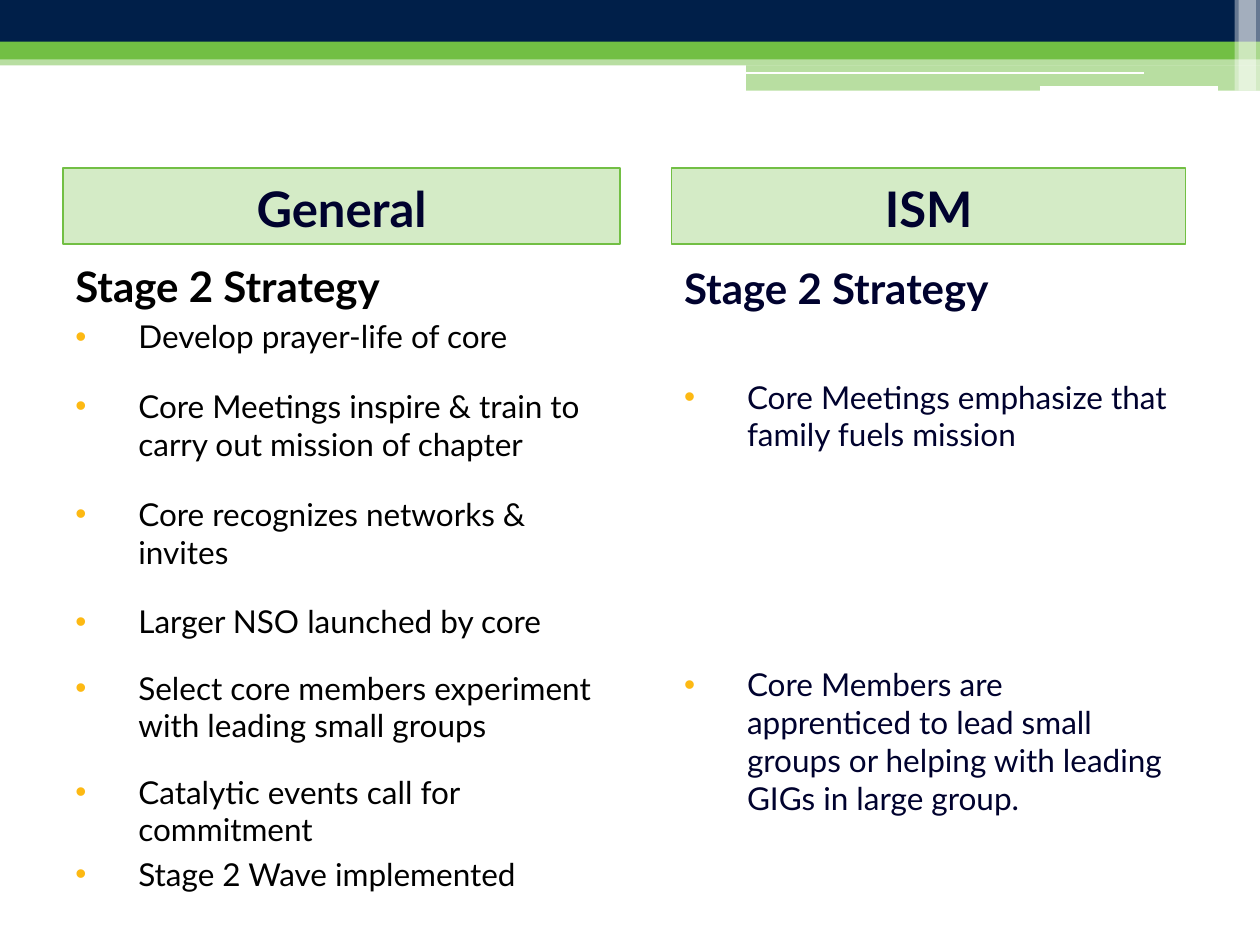
from dataclasses import dataclass

from lxml import etree
from pptx import Presentation
from pptx import util as u
from pptx.dml.color import RGBColor
from pptx.enum import shapes, text
from pptx.oxml import ns


@dataclass(frozen=True)
class Theme:
    font: str = "Lato"
    navy: str = "001F49"
    green: str = "72BF44"
    gold: str = "FDB913"
    white: str = "FFFFFF"
    ink: str = "00022E"
    black: str = "000000"
    banner_size: int = 28
    heading_size: int = 24
    body_size: int = 18


def apply(target, values):
    for name, value in values.items():
        setattr(target, name, value)


def add_element(parent, tag, **attributes):
    return etree.SubElement(parent, ns.qn(tag), attributes)


class SlideBuilder:
    def __init__(self, page, theme):
        self.page = page
        self.theme = theme

    def block(self, left, top, width, height, color, opacity=100, border=None):
        """Filled rectangle, optionally see-through or outlined."""
        box = self.page.shapes.add_shape(
            shapes.MSO_SHAPE.RECTANGLE, *map(u.Cm, (left, top, width, height)))
        box.shadow.inherit = False
        box.fill.solid()
        box.fill.fore_color.rgb = RGBColor.from_string(color)
        if opacity < 100:
            fill = box._element.spPr.find(ns.qn("a:solidFill"))
            add_element(fill[0], "a:alpha", val=str(opacity * 1000))
        if border:
            box.line.color.rgb = RGBColor.from_string(border)
            box.line.width = u.Pt(0.75)
        else:
            box.line.fill.background()
        return box

    def rule(self, left, right, top, weight):
        """White horizontal line."""
        line = self.page.shapes.add_connector(
            shapes.MSO_CONNECTOR.STRAIGHT,
            u.Cm(left), u.Cm(top), u.Cm(right), u.Cm(top))
        line.line.color.rgb = RGBColor.from_string(self.theme.white)
        line.line.width = u.Pt(weight)
        add_element(line._element.spPr, "a:effectLst")

    def add_span(self, para, wording, size, color, bold=False):
        span = para.add_run()
        span.text = wording
        apply(span.font, {"name": self.theme.font, "size": u.Pt(size), "bold": bold})
        span.font.color.rgb = RGBColor.from_string(color)

    def banner(self, left, top, width, height, wording):
        """Pale green column header."""
        green = self.theme.green
        box = self.block(left, top, width, height, green, 30, border=green)
        apply(box.text_frame, {"word_wrap": True,
                               "vertical_anchor": text.MSO_ANCHOR.BOTTOM})
        para = box.text_frame.paragraphs[0]
        para.alignment = text.PP_ALIGN.CENTER
        self.add_span(para, wording, self.theme.banner_size, self.theme.ink, True)

    def bullet(self, para):
        properties = para._p.get_or_add_pPr()
        indent = u.Cm(1.27)
        properties.set("marL", str(indent))
        properties.set("indent", str(-indent))
        color = add_element(properties, "a:buClr")
        add_element(color, "a:srgbClr", val=self.theme.gold)
        add_element(properties, "a:buFont", typeface="Arial")
        add_element(properties, "a:buChar", char="•")

    def strategy(self, left, top, width, height, heading, items, color):
        """Bold heading above bullets given as (space before, wording)."""
        box = self.page.shapes.add_textbox(*map(u.Cm, (left, top, width, height)))
        frame = box.text_frame
        frame.word_wrap = True
        self.add_span(frame.paragraphs[0], heading, self.theme.heading_size, color, True)
        for gap, wording in items:
            para = frame.add_paragraph()
            self.bullet(para)
            para.space_before = u.Pt(gap)
            self.add_span(para, wording, self.theme.body_size, color)


def main():
    theme = Theme()
    deck = Presentation()
    apply(deck, {"slide_width": u.Cm(25.4), "slide_height": u.Cm(19.05)})
    page = deck.slides.add_slide(deck.slide_layouts[6])
    builder = SlideBuilder(page, theme)

    # Top bands
    for band in ((0, 0.74, 25.4, 0.46, theme.green),
                 (0, 1.07, 25.4, 0.25, theme.green, 50),
                 (15.04, 1.32, 10.36, 0.51, theme.green, 50),
                 (0, 0, 25.4, 0.84, theme.navy)):
        builder.block(*band)
    builder.rule(15.04, 23.06, 1.47, 1.5)
    builder.rule(20.96, 24.56, 1.78, 3)
    for left in (24.97, 24.89):
        builder.block(left, 0, 0.43, 1.83, theme.white, 40)

    # Two strategy columns
    tight, medium, wide = 3.6, 16.2, 18.3
    general = (
        (tight, "Develop prayer-life of core"),
        (wide, "Core Meetings inspire & train to carry out mission of chapter"),
        (wide, "Core recognizes networks & invites"),
        (wide, "Larger NSO launched by core"),
        (medium, "Select core members experiment with leading small groups"),
        (medium, "Catalytic events call for commitment"),
        (tight, "Stage 2 Wave implemented"),
    )
    ism = (
        (37.2, "Core Meetings emphasize that family fuels mission"),
        (121.2, "Core Members are apprenticed to lead small groups or "
                "helping with leading GIGs in large group."),
    )
    for left, width, top, name, items, color in (
            (1.27, 11.23, 5.13, "General", general, theme.black),
            (13.54, 10.36, 5.16, "ISM", ism, theme.ink)):
        builder.banner(left, 3.39, width, 1.53, name)
        builder.strategy(left, top, width, 14.77, "Stage 2 Strategy", items, color)

    deck.save("out.pptx")


if __name__ == "__main__":
    main()
